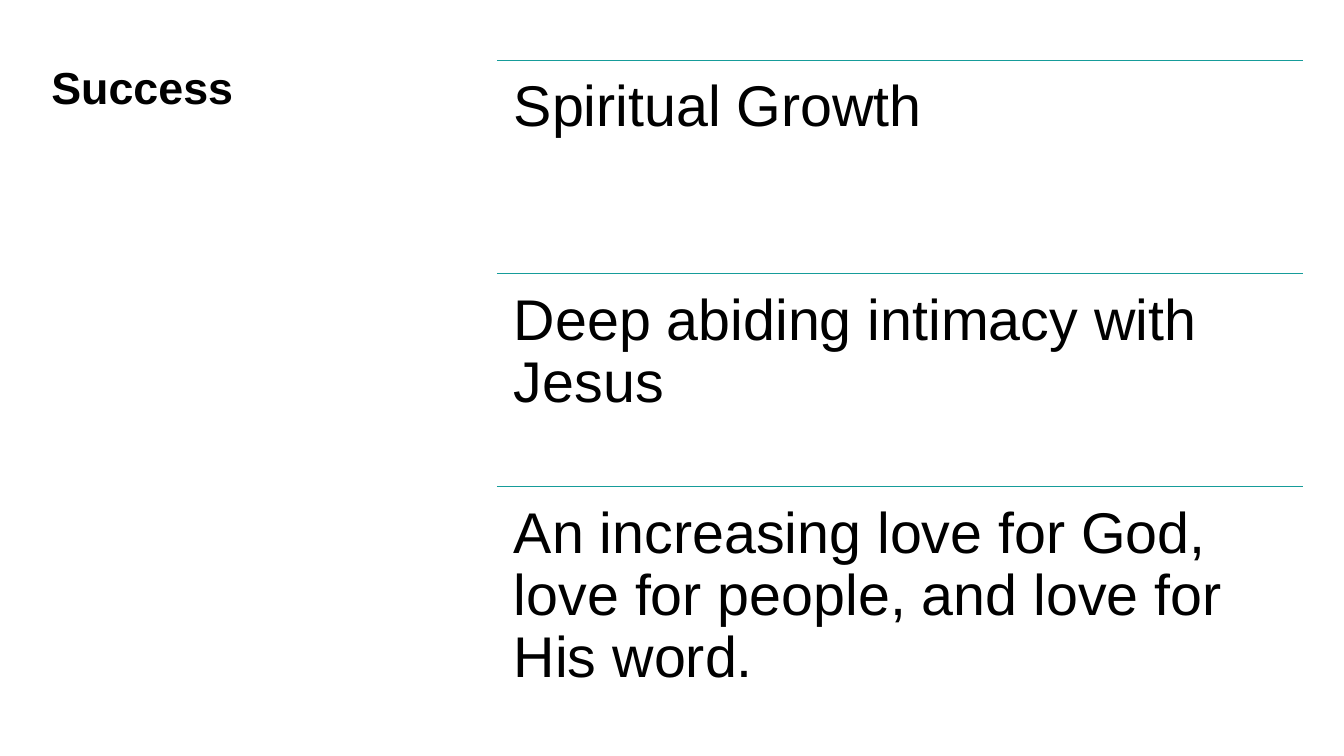
import pptx
import pptx.dml.color
import pptx.enum.shapes
import pptx.enum.text
import pptx.oxml
import pptx.util
from pptx.util import Cm

COLOURS = {"background": "FFFFFF", "text": "000000", "rule": "169C9A"}
FONT = "Arial"
GOALS = [
    "Spiritual Growth",
    "Deep abiding intimacy with Jesus",
    "An increasing love for God, love for people, and love for His word.",
]


def colour(name):
    return pptx.dml.color.RGBColor.from_string(COLOURS[name])


def write(frame, wording, size, bold=False):
    """Fill a frame with one left-aligned paragraph, set from the top."""
    frame.word_wrap = True
    frame.auto_size = pptx.enum.text.MSO_AUTO_SIZE.NONE
    frame.vertical_anchor = pptx.enum.text.MSO_ANCHOR.TOP
    frame.text = wording
    paragraph = frame.paragraphs[0]
    paragraph.alignment = pptx.enum.text.PP_ALIGN.LEFT
    paragraph.line_spacing = 0.9
    font = paragraph.runs[0].font
    font.name = FONT
    font.size = pptx.util.Pt(size)
    font.bold = bold
    font.color.rgb = colour("text")


def place_heading(slide, left, top, width, height):
    heading = slide.shapes.title
    heading.left, heading.top = left, top
    heading.width, heading.height = width, height
    write(heading.text_frame, "Success", 32, bold=True)


def draw_rule(slide, left, top, width):
    rule = slide.shapes.add_connector(
        pptx.enum.shapes.MSO_CONNECTOR.STRAIGHT, left, top, left + width, top)
    rule.line.color.rgb = colour("rule")
    rule.line.width = pptx.util.Pt(1)
    # An empty effect list removes the theme shadow
    properties = rule._element.spPr
    properties.append(pptx.oxml.parse_xml(
        '<a:effectLst xmlns:a="http://schemas.openxmlformats.org/drawingml/2006/main"/>'))


def place_goals(slide, left, top, width, height):
    """Stack the goals in equal rows, each under its own rule."""
    row_height = height // len(GOALS)
    for row, wording in enumerate(GOALS):
        row_top = top + row * row_height
        draw_rule(slide, left, row_top, width)
        goal = slide.shapes.add_textbox(left, row_top, width, row_height)
        frame = goal.text_frame
        frame.margin_left = frame.margin_right = Cm(0.43)
        frame.margin_top = frame.margin_bottom = Cm(0.43)
        write(frame, wording, 41)


def main():
    deck = pptx.Presentation()
    deck.slide_width, deck.slide_height = Cm(33.87), Cm(19.05)
    slide = deck.slides.add_slide(deck.slide_layouts.get_by_name("Title Only"))
    slide.background.fill.solid()
    slide.background.fill.fore_color.rgb = colour("background")

    # Heading on the left, goals on the right
    place_heading(slide, Cm(1.04), Cm(1.52), Cm(9.7), Cm(15.9))
    place_goals(slide, Cm(12.52), Cm(1.52), Cm(20.32), Cm(16.11))

    deck.save("out.pptx")


if __name__ == "__main__":
    main()
